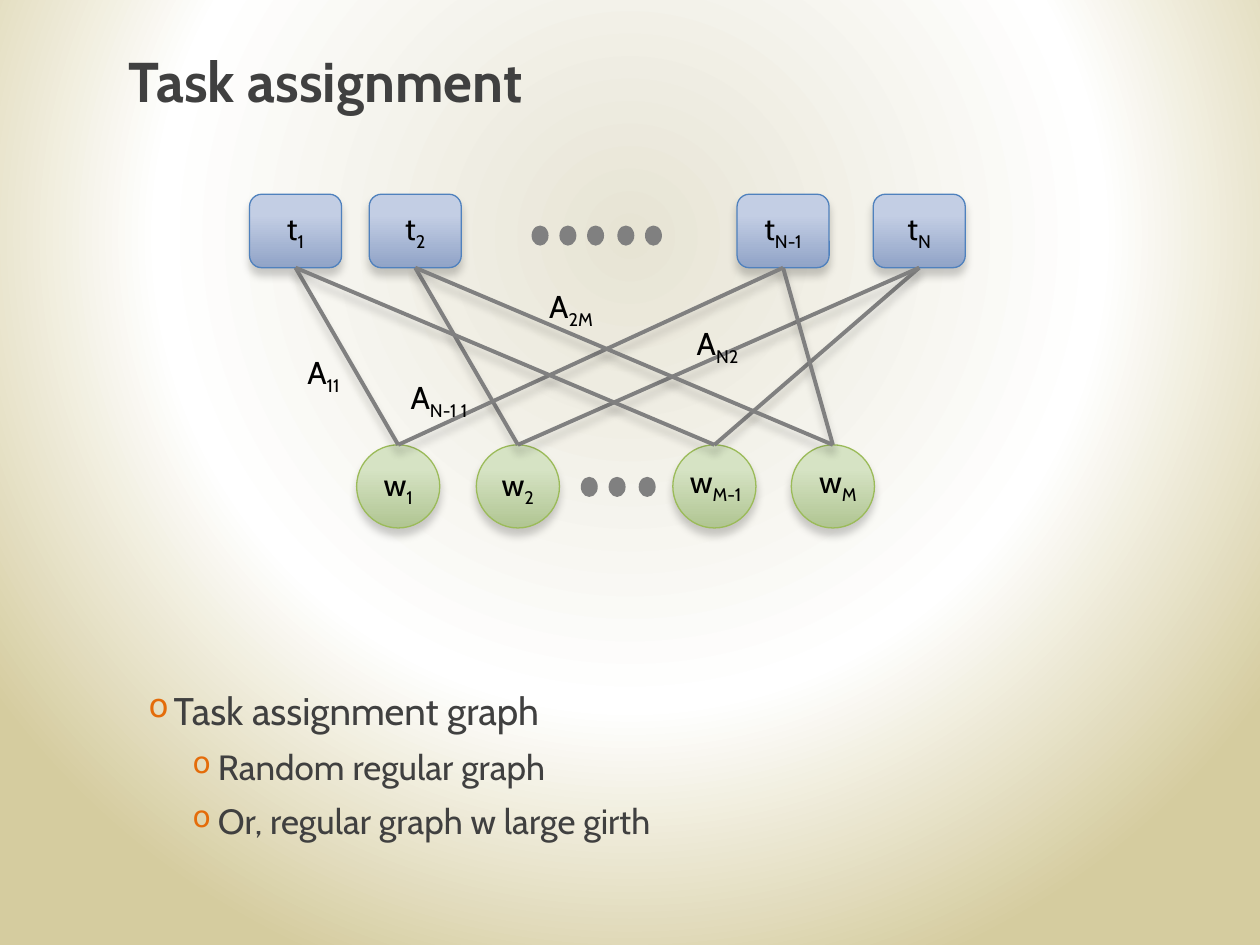
from lxml.etree import SubElement
from pptx import Presentation
from pptx.dml.color import RGBColor
from pptx.enum.shapes import MSO_CONNECTOR, MSO_SHAPE
from pptx.enum.text import MSO_ANCHOR, MSO_AUTO_SIZE, PP_ALIGN
from pptx.oxml import parse_xml
from pptx.oxml.ns import nsdecls, qn
from pptx.util import Pt

FONT = "Cabin"
COLORS = {
    "text": "404040", "label": "000000", "bullet": "E46C0A", "gray": "808080",
    "task_light": "C3CEE4", "task_dark": "90A3C7", "task_line": "4F81BD",
    "worker_light": "D6E3C4", "worker_dark": "B0C592", "worker_line": "9BBB59",
    "center": "E7E4D4", "ring": "FFFFFF", "edge": "D5CC9F", "shadow": "000000",
}
VERTICAL = '<a:lin ang="5400000" scaled="0"/>'
CIRCULAR = '<a:path path="circle"><a:fillToRect l="20000" t="10000" r="20000" b="60000"/></a:path>'
TASKS = [("1", 142.6), ("2", 211), ("N-1", 421.2), ("N", 499)]
WORKERS = [("1", 203.8), ("2", 272.2), ("M-1", 384.5), ("M", 452.2)]
EDGES = [("1", "1"), ("N", "M-1"), ("N", "2"), ("2", "2"),
         ("N-1", "M"), ("N-1", "1"), ("1", "M-1"), ("2", "M")]
WORKER_LABELS = [("M-1", 385.2, 260.6, 47.5), ("M", 460.1, 260.6, 37.4)]
EDGE_LABELS = [("11", 168.5, 198, 37.4), ("N-1 1", 227.5, 212.4, 54),
               ("N2", 391, 181.4, 41), ("2M", 306.7, 160.6, 42.5)]
TASK_DOTS = [303.8, 319.7, 335.5, 352.8, 368.6]
WORKER_DOTS = [331.9, 347.8, 365]
BULLETS = [("Task assignment graph", 0, 22, 18),
           ("Random regular graph", 1, 20, 43.2),
           ("Or, regular graph w large girth", 1, 20, 43.2)]


def color(name):
    """Return the named color."""
    return RGBColor.from_string(COLORS[name])


def set_gradient(fill, properties, stops, direction):
    """Give a background or shape a gradient of (percent, color name) stops."""
    fill.solid()
    stop_xml = "".join(
        f'<a:gs pos="{percent * 1000}"><a:srgbClr val="{COLORS[name]}"/></a:gs>'
        for percent, name in stops)
    gradient = parse_xml(
        f'<a:gradFill {nsdecls("a")} rotWithShape="1"><a:gsLst>{stop_xml}</a:gsLst>'
        f'{direction}</a:gradFill>')
    properties.replace(properties.find(qn("a:solidFill")), gradient)


def add_shadow(shape):
    """Add a soft shadow below a shape or connector."""
    properties = shape._element.spPr
    effects = properties.find(qn("a:effectLst"))
    if effects is None:
        effects = SubElement(properties, qn("a:effectLst"))
    shadow = SubElement(effects, qn("a:outerShdw"), blurRad=str(Pt(5)), dist=str(Pt(4)),
                        dir="5400000", rotWithShape="0")
    shade = SubElement(shadow, qn("a:srgbClr"), val=COLORS["shadow"])
    SubElement(shade, qn("a:alpha"), val="20000")


def style_run(run, size, color_name, bold=False):
    """Set the font of a run."""
    run.font.name = FONT
    run.font.size = Pt(size)
    run.font.bold = bold
    run.font.color.rgb = color(color_name)


def write_symbol(text_frame, letter, subscript, alignment):
    """Write a letter with a subscript."""
    text_frame.word_wrap = False
    paragraph = text_frame.paragraphs[0]
    paragraph.text = letter
    paragraph.alignment = alignment
    lower = paragraph.add_run()
    lower.text = subscript
    for run in paragraph.runs:
        style_run(run, 18, "label")
    lower.font._element.set("baseline", "-25000")


def add_node(slide, kind, preset, left, top, width, height):
    """Add a shaded graph node of a kind of color."""
    node = slide.shapes.add_shape(preset, Pt(left), Pt(top), Pt(width), Pt(height))
    node.shadow.inherit = False
    set_gradient(node.fill, node._element.spPr,
                 [(28, f"{kind}_light"), (100, f"{kind}_dark")], VERTICAL)
    node.line.color.rgb = color(f"{kind}_line")
    node.line.width = Pt(0.75)
    node.text_frame.vertical_anchor = MSO_ANCHOR.MIDDLE
    add_shadow(node)
    return node


def add_dots(slide, lefts, top):
    """Add a row of ellipsis dots."""
    for left in lefts:
        dot = slide.shapes.add_shape(MSO_SHAPE.OVAL, Pt(left), Pt(top), Pt(9.7), Pt(11.5))
        dot.shadow.inherit = False
        dot.fill.solid()
        dot.fill.fore_color.rgb = color("gray")
        dot.line.fill.background()


def add_edge(slide, task, worker):
    """Connect the bottom of a task to the top of a worker."""
    edge = slide.shapes.add_connector(MSO_CONNECTOR.STRAIGHT, 0, 0, 0, 0)
    edge.begin_connect(task, 2)
    edge.end_connect(worker, 0)
    edge.line.color.rgb = color("gray")
    edge.line.width = Pt(2.25)
    add_shadow(edge)


def add_label(slide, letter, subscript, left, top, width, alignment):
    """Add a free symbol label."""
    box = slide.shapes.add_textbox(Pt(left), Pt(top), Pt(width), Pt(29))
    write_symbol(box.text_frame, letter, subscript, alignment)
    box.text_frame.auto_size = MSO_AUTO_SIZE.SHAPE_TO_FIT_TEXT


def add_title(slide, text):
    """Add the slide title."""
    box = slide.shapes.add_textbox(Pt(66.2), Pt(23), Pt(553), Pt(90))
    box.text_frame.word_wrap = True
    box.text_frame.text = text
    style_run(box.text_frame.paragraphs[0].runs[0], 32, "text", bold=True)


def add_bullets(slide, items):
    """Add the bulleted text."""
    box = slide.shapes.add_textbox(Pt(74.2), Pt(388.8), Pt(590.4), Pt(118))
    text_frame = box.text_frame
    text_frame.word_wrap = True
    for index, (text, level, size, margin) in enumerate(items):
        paragraph = text_frame.add_paragraph() if index else text_frame.paragraphs[0]
        paragraph.text = text
        paragraph.level = level
        paragraph.space_before = Pt(size * 0.2)
        paragraph.space_after = Pt(3)
        style_run(paragraph.runs[0], size, "text")
        properties = paragraph._p.get_or_add_pPr()
        properties.set("marL", str(Pt(margin)))
        properties.set("indent", str(Pt(-14.4)))
        bullet_color = SubElement(properties, qn("a:buClr"))
        SubElement(bullet_color, qn("a:srgbClr"), val=COLORS["bullet"])
        SubElement(properties, qn("a:buSzPct"), val="85000")
        SubElement(properties, qn("a:buChar"), char="o")


def main():
    """Build the task assignment slide."""
    presentation = Presentation()
    presentation.slide_width, presentation.slide_height = Pt(720), Pt(540)
    slide = presentation.slides.add_slide(presentation.slide_layouts[6])
    background = slide.background.fill
    background.solid()
    set_gradient(background, slide._element.find(".//" + qn("p:bgPr")),
                 [(0, "center"), (60, "ring"), (100, "edge")], CIRCULAR)
    add_bullets(slide, BULLETS)
    add_title(slide, "Task assignment")
    tasks, workers = {}, {}
    for name, left in TASKS:
        tasks[name] = add_node(slide, "task", MSO_SHAPE.ROUNDED_RECTANGLE, left, 111, 52.6, 42)
        write_symbol(tasks[name].text_frame, "t", name, PP_ALIGN.CENTER)
    add_dots(slide, TASK_DOTS, 128.9)
    separate = [label[0] for label in WORKER_LABELS]
    for name, left in WORKERS:
        workers[name] = add_node(slide, "worker", MSO_SHAPE.OVAL, left, 254.2, 47.5, 47.5)
        if name not in separate:
            write_symbol(workers[name].text_frame, "w", name, PP_ALIGN.CENTER)
    add_dots(slide, WORKER_DOTS, 272.5)
    for task, worker in EDGES:
        add_edge(slide, tasks[task], workers[worker])
    for label in WORKER_LABELS:
        add_label(slide, "w", *label, PP_ALIGN.CENTER)
    for label in EDGE_LABELS:
        add_label(slide, "A", *label, PP_ALIGN.LEFT)
    presentation.save("out.pptx")


if __name__ == "__main__":
    main()
